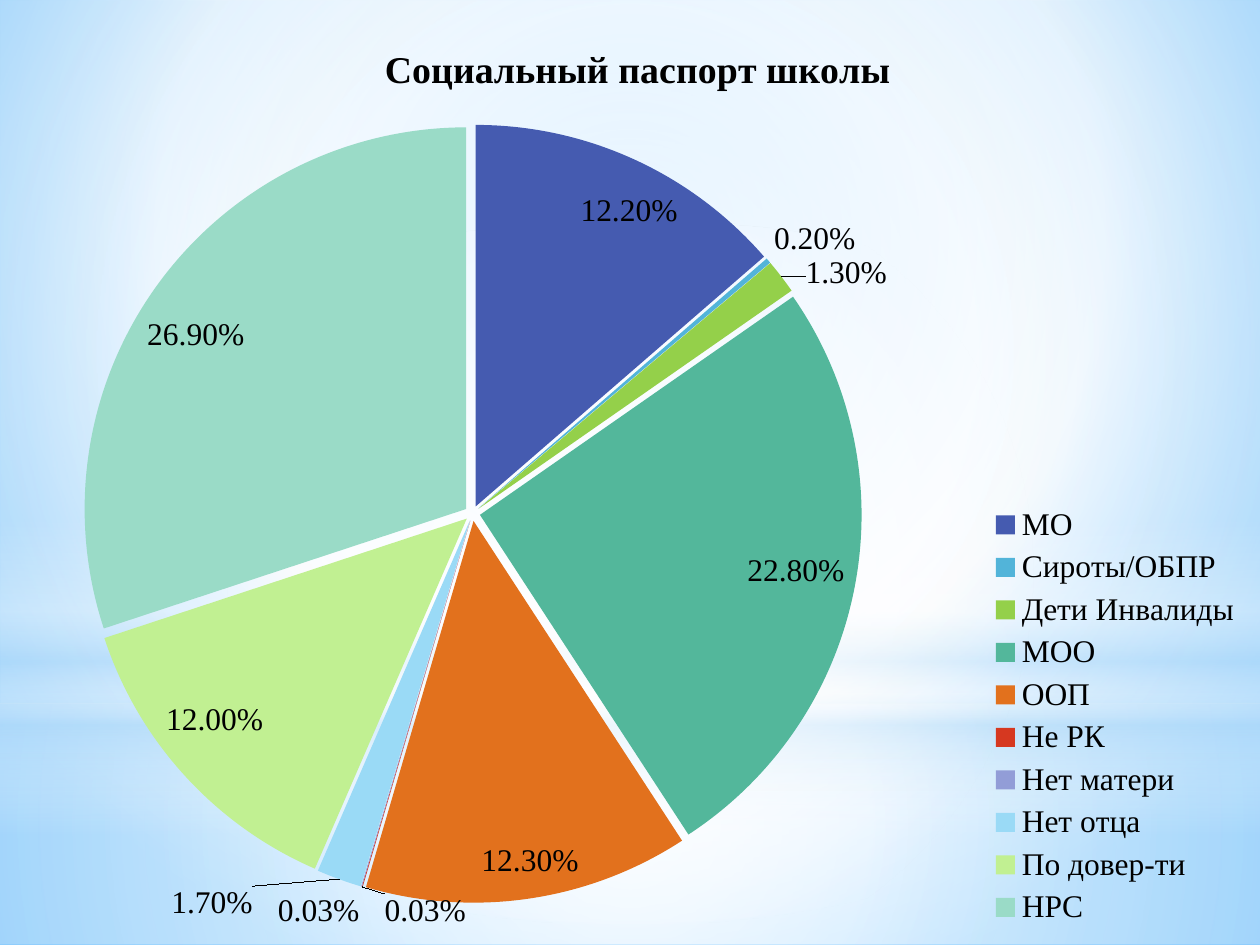
from dataclasses import dataclass

from lxml.etree import SubElement
from pptx import Presentation
from pptx.chart.data import CategoryChartData
from pptx.dml.color import RGBColor
from pptx.enum.chart import XL_CHART_TYPE, XL_LABEL_POSITION, XL_LEGEND_POSITION
from pptx.enum.shapes import MSO_SHAPE
from pptx.oxml import parse_xml
from pptx.oxml.ns import nsdecls, qn
from pptx.util import Pt


@dataclass(frozen=True)
class Theme:
    base_font: str = "Lato"
    text_font: str = "Times New Roman"
    text_color: str = "000000"
    text_size: float = 18
    title_size: float = 21.6
    white: str = "FFFFFF"
    pale: str = "B4DCFA"
    sky: str = "9ED5FF"
    edge: str = "5BB9FF"


THEME = Theme()
WIDTH, HEIGHT = 720, 540
CENTER = (50, 50, 50, 50)
TITLE = "Социальный паспорт школы"
GROUPS = [
    ("МО", 0.122, "455BB0"),
    ("Сироты/ОБПР", 0.002, "52B4D9"),
    ("Дети Инвалиды", 0.013, "94D04A"),
    ("МОО", 0.228, "53B79B"),
    ("ООП", 0.123, "E2711D"),
    ("Не РК", 0.0003, "D63820"),
    ("Нет матери", 0.0003, "929DD7"),
    ("Нет отца", 0.017, "9ADAF6"),
    ("По довер-ти", 0.12, "C1F092"),
    ("НРС", 0.269, "9ADBC7"),
]


def set_gradient(fill, owner, stops, focus=None):
    fill.gradient()
    gradient = next(owner.iter(qn("a:gradFill")))
    for child in list(gradient):
        gradient.remove(child)
    stop_list = SubElement(gradient, qn("a:gsLst"))
    for position, color, opacity in stops:
        stop = SubElement(stop_list, qn("a:gs"), pos=str(position * 1000))
        rgb = SubElement(stop, qn("a:srgbClr"), val=color)
        if opacity < 100:
            SubElement(rgb, qn("a:alpha"), val=str(opacity * 1000))
    if focus:
        circle = SubElement(gradient, qn("a:path"), path="circle")
        sides = {side: str(value * 1000) for side, value in zip("ltrb", focus)}
        SubElement(circle, qn("a:fillToRect"), **sides)
    else:
        SubElement(gradient, qn("a:lin"), ang="5400000", scaled="0")


def add_glow(slide, preset, box, stops, focus=None):
    shape = slide.shapes.add_shape(preset, *map(Pt, box))
    shape.shadow.inherit = False
    shape.line.fill.background()
    set_gradient(shape.fill, shape._element, stops, focus)


def build_backdrop(slide, box):
    left, top, width, height = box
    white, pale = THEME.white, THEME.pale
    set_gradient(
        slide.background.fill, slide._element,
        [(0, THEME.sky, 100), (60, white, 100), (100, THEME.edge, 100)],
        (20, 10, 20, 60),
    )
    horizon = 402
    add_glow(slide, MSO_SHAPE.RECTANGLE,
             (left, top + horizon, width, height - horizon),
             [(0, white, 91), (37, white, 76), (100, pale, 79)], CENTER)
    add_glow(slide, MSO_SHAPE.RECTANGLE, (left, top, width, horizon),
             [(0, white, 89), (48, white, 62), (100, pale, 79)], CENTER)
    add_glow(slide, MSO_SHAPE.RECTANGLE, (left, top + 297, width, 180),
             [(0, white, 0), (29, white, 30), (45, pale, 40),
              (55, white, 26), (65, pale, 60), (100, white, 0)])
    add_glow(slide, MSO_SHAPE.OVAL, (left, top + 126, width, horizon),
             [(0, white, 100), (56, white, 0)], CENTER)


def style_font(font, name, size, bold=False):
    font.name = name
    font.size = Pt(size)
    font.bold = bold
    font.color.rgb = RGBColor.from_string(THEME.text_color)


def place_part(part, position, size=(), target=None, after=None):
    for old_layout in part.findall(qn("c:layout")):
        part.remove(old_layout)
    layout = parse_xml(f"<c:layout {nsdecls('c')}/>")
    manual = SubElement(layout, qn("c:manualLayout"))
    if target:
        SubElement(manual, qn("c:layoutTarget"), val=target)
    for name in ("xMode", "yMode"):
        SubElement(manual, qn(f"c:{name}"), val="edge")
    for name, value in zip("xywh", (*position, *size)):
        SubElement(manual, qn(f"c:{name}"), val=str(value))
    if after:
        part.find(qn(after)).addnext(layout)
    else:
        part.insert(0, layout)


def build_pie(slide, box):
    chart_data = CategoryChartData(number_format="0.00%")
    chart_data.categories = [name for name, _, _ in GROUPS]
    chart_data.add_series(TITLE, [share for _, share, _ in GROUPS])
    frame = slide.shapes.add_chart(XL_CHART_TYPE.PIE, *map(Pt, box), chart_data)
    chart = frame.chart
    style_font(chart.font, THEME.base_font, THEME.text_size)

    chart.has_title = True
    title = chart.chart_title
    title.text_frame.text = TITLE
    title_run = title.text_frame.paragraphs[0].runs[0]
    style_font(title_run.font, THEME.text_font, THEME.title_size, True)
    place_part(title._element, (0.3, 0.04), after="c:tx")

    chart.has_legend = True
    legend = chart.legend
    legend.position = XL_LEGEND_POSITION.RIGHT
    legend.include_in_layout = False
    style_font(legend.font, THEME.text_font, THEME.text_size)
    place_part(legend._element, (0.78, 0.53), (0.21, 0.46), after="c:legendPos")

    plot_area = next(chart._chartSpace.iter(qn("c:plotArea")))
    place_part(plot_area, (0.07, 0.14), (0.61, 0.81), target="inner")

    plot = chart.plots[0]
    plot.vary_by_categories = True
    series = plot.series[0]
    for index, (_, _, color) in enumerate(GROUPS):
        point = series.points[index]
        point.format.fill.solid()
        point.format.fill.fore_color.rgb = RGBColor.from_string(color)
        index_element = point.format._element.find(qn("c:idx"))
        explosion = parse_xml(f'<c:explosion {nsdecls("c")} val="2"/>')
        index_element.addnext(explosion)

    labels = series.data_labels
    labels.show_value = True
    labels.show_percentage = False
    labels.number_format = "0.00%"
    labels.number_format_is_linked = False
    labels.position = XL_LABEL_POSITION.BEST_FIT
    style_font(labels.font, THEME.text_font, THEME.text_size)


def main():
    presentation = Presentation()
    presentation.slide_width = Pt(WIDTH)
    presentation.slide_height = Pt(HEIGHT)
    slide = presentation.slides.add_slide(presentation.slide_layouts[6])
    build_backdrop(slide, (0, 0, WIDTH, HEIGHT))
    build_pie(slide, (0, 0, WIDTH, 538.5))
    presentation.save("out.pptx")


if __name__ == "__main__":
    main()
